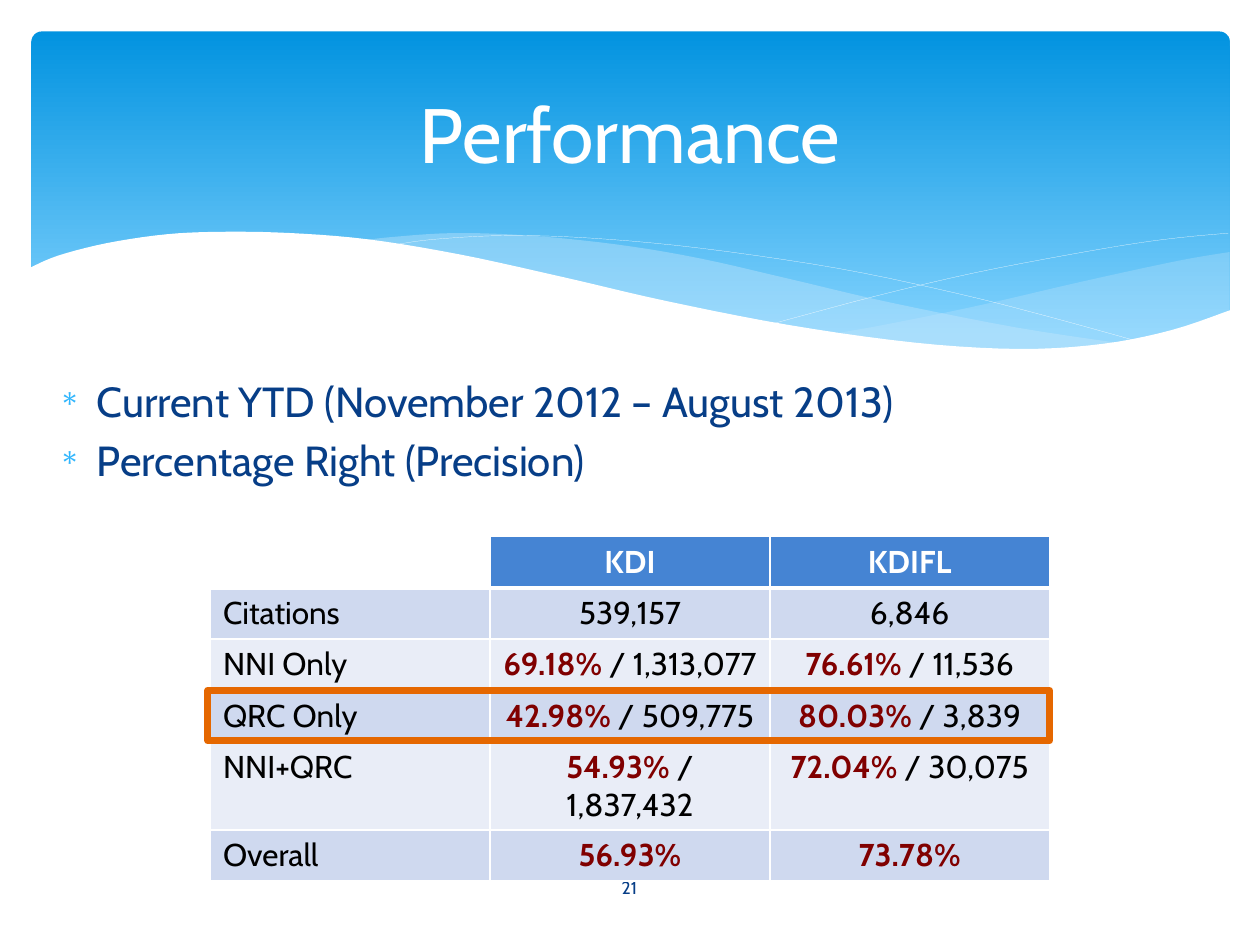
from lxml import etree
from pptx import Presentation
from pptx.dml.color import RGBColor as RGB
from pptx.enum.shapes import MSO_SHAPE as SHAPE
from pptx.enum.text import MSO_ANCHOR as ANCHOR, PP_ALIGN as ALIGN
from pptx.oxml.ns import qn
from pptx.util import Inches, Pt

FONT = "Cabin"
COLORS = {
    "white": "FFFFFF", "black": "000000", "navy": "073E87", "bullet": "31B6FD",
    "sky": "0293E0", "pale": "83D3FE", "ribbon": "C6E7FC", "header": "4584D3",
    "odd": "CFD9EF", "even": "E9EDF7", "maroon": "800000", "orange": "E56700",
}
# The slide is a grid of 100 columns and 75 rows; boxes are left, top, width, height.
COLS, ROWS = 100, 75
UNIT = Inches(10) // COLS

# Wave edges, as grid offsets from the corner of the wave box
RIGHT_TOP = [(95.3, 1.6), (91.2, 2.3), (83.8, 3.9), (75.6, 5.8), (68.3, 7.3), (63.8, 8.1)]
RIGHT_BOTTOM = [(63.8, 8.1), (69.6, 8.8), (75.8, 9.3), (81.2, 9.3), (86.6, 8.8),
                (91.2, 7.8), (95.3, 6.3)]
LEFT_TOP = [(87, 8.9), (78.4, 7.6), (68.3, 5.6), (60.6, 3.8), (53.2, 2.1), (46.6, 1),
            (39.7, 0.3), (33.8, 0.1), (29, 0.4), (26.3, 0.7)]
LEFT_BOTTOM = [(26.3, 0.7), (33.9, 1.9), (42.6, 3.8), (50.7, 5.6), (59.5, 7.4),
               (68.6, 8.8), (76.2, 9.4), (82.5, 9.3), (87, 8.9)]
FALLING = [(28.6, 1.1), (32.1, 0.6), (37.8, 0.3), (44.6, 0.5), (53.3, 1.3),
           (64.2, 2.9), (73.7, 4.9), (80.8, 6.7), (88.4, 8.8)]
RISING = [(59, 7.3), (67.2, 5.1), (75.3, 3.2), (84.3, 1.5), (90.1, 0.6), (95.2, 0.1)]
FRONT = [(95.4, 6.2), (90.7, 7.8), (85.2, 8.9), (78.6, 9.3), (70.3, 8.8), (60.3, 7.4),
         (50.6, 5.5), (42.4, 3.6), (34.2, 1.8), (26.9, 0.6), (20.7, 0.1), (15.4, 0),
         (10.9, 0.2), (6.2, 0.9), (2.3, 1.9), (0, 2.9)]

TABLE = [
    ("", "KDI", "KDIFL"),
    ("Citations", "539,157", "6,846"),
    ("NNI Only", "69.18% / 1,313,077", "76.61% / 11,536"),
    ("QRC Only", "42.98% / 509,775", "80.03% / 3,839"),
    ("NNI+QRC", "54.93% / 1,837,432", "72.04% / 30,075"),
    ("Overall", "56.93%", "73.78%"),
]


def rgb(name):
    return RGB.from_string(COLORS[name])


def emu(box):
    return [round(v * UNIT) for v in box]


def add_run(p, text, size=18, color="black", bold=False):
    r = p.add_run()
    r.text = text
    r.font.name, r.font.size, r.font.bold = FONT, Pt(size), bold
    r.font.color.rgb = rgb(color)


def add_text(s, box, lines, align=ALIGN.LEFT, anchor=ANCHOR.MIDDLE, **fmt):
    tf = s.shapes.add_textbox(*emu(box)).text_frame
    tf.word_wrap, tf.vertical_anchor = True, anchor
    for i, line in enumerate(lines):
        p = tf.add_paragraph() if i else tf.paragraphs[0]
        p.alignment = align
        add_run(p, line, **fmt)
    return tf


def spline(knots, steps=5):
    """Points of a Catmull-Rom curve through the knots."""
    k = [knots[0], *knots, knots[-1]]
    points = [knots[0]]
    for a, b, c, d in zip(k, k[1:], k[2:], k[3:]):
        for t in (n / steps for n in range(1, steps + 1)):
            points.append(tuple(
                (2 * q + (r - p) * t + (2 * p - 5 * q + 4 * r - e) * t ** 2
                 + (3 * q - p - 3 * r + e) * t ** 3) / 2
                for p, q, r, e in zip(a, b, c, d)))
    return points


def add_wave(s, box, points, fill=None, alpha=100):
    """A filled area, or a white hairline when there is no fill."""
    first, *rest = [emu((box[0] + x, box[1] + y)) for x, y in points]
    builder = s.shapes.build_freeform(*first)
    builder.add_line_segments(rest, close=bool(fill))
    sp = builder.convert_to_shape()
    sp.shadow.inherit = False
    if fill:
        sp.fill.solid()
        sp.fill.fore_color.rgb = rgb(fill)
        sp.line.fill.background()
        if alpha < 100:
            color = sp._element.spPr.find(".//" + qn("a:srgbClr"))
            etree.SubElement(color, qn("a:alpha"), val=str(alpha * 1000))
    else:
        sp.fill.background()
        sp.line.color.rgb = rgb("white")
        sp.line.width = Pt(0.1)


def add_banner(s, box):
    sp = s.shapes.add_shape(SHAPE.ROUNDED_RECTANGLE, *emu(box))
    sp.adjustments[0] = 0.03
    sp.shadow.inherit = False
    sp.line.fill.background()
    sp.fill.gradient()
    sp.fill.gradient_angle = 270
    for stop, position, color in zip(sp.fill.gradient_stops, (0, 0.9), ("sky", "pale")):
        stop.position = position
        stop.color.rgb = rgb(color)


def add_waves(s, box):
    w, h = box[2:]
    add_wave(s, box, spline(RIGHT_TOP) + spline(RIGHT_BOTTOM), "ribbon", 29)
    add_wave(s, box, spline(LEFT_TOP) + spline(LEFT_BOTTOM), "ribbon", 40)
    for edge in (FALLING, RISING):
        add_wave(s, box, spline(edge))
    add_wave(s, box, spline(FRONT) + [(0, h), (w, h)], "white")


def add_bullets(s, box, lines):
    tf = add_text(s, box, lines, anchor=ANCHOR.TOP, size=24, color="navy")
    for p in tf.paragraphs:
        p.space_before = Pt(4.8)
        pPr = p._p.get_or_add_pPr()
        pPr.set("marL", str(Inches(0.3)))
        pPr.set("indent", str(-Inches(0.3)))
        tint = etree.SubElement(pPr, qn("a:buClr"))
        etree.SubElement(tint, qn("a:srgbClr"), val=COLORS["bullet"])
        etree.SubElement(pPr, qn("a:buSzPct"), val="70000")
        etree.SubElement(pPr, qn("a:buChar"), char="∗")


def set_borders(cell, **widths):
    tcPr = cell._tc.get_or_add_tcPr()
    for i, side in enumerate("LRTB"):
        ln = etree.Element(qn("a:ln" + side), w=str(Pt(widths.get(side, 1))))
        fill = etree.SubElement(ln, qn("a:solidFill"))
        etree.SubElement(fill, qn("a:srgbClr"), val=COLORS["white"])
        tcPr.insert(i, ln)


def fill_cell(cell, row, col, text):
    cell.fill.solid()
    if row == 0:
        shade = "header" if text else "white"
    else:
        shade = "odd" if row % 2 else "even"
    cell.fill.fore_color.rgb = rgb(shade)
    set_borders(cell, **{0: {"B": 3}, 1: {"T": 3}}.get(row, {}))
    p = cell.text_frame.paragraphs[0]
    p.alignment = ALIGN.CENTER if col else ALIGN.LEFT
    share, percent, rest = text.rpartition("%")
    if percent:
        add_run(p, share + percent, color="maroon", bold=True)
    if rest:
        add_run(p, rest, color="black" if row else "white", bold=row == 0)


def add_results(s, box, rows):
    table = s.shapes.add_table(len(rows), len(rows[0]), *emu(box)).table
    table.first_row = table.horz_banding = False
    for i, row in enumerate(rows):
        for j, text in enumerate(row):
            fill_cell(table.cell(i, j), i, j, text)


def add_highlight(s, box):
    sp = s.shapes.add_shape(SHAPE.RECTANGLE, *emu(box))
    sp.shadow.inherit = False
    sp.fill.background()
    sp.line.color.rgb = rgb("orange")
    sp.line.width = Pt(4)
    etree.SubElement(sp.line._get_or_add_ln(), qn("a:round"))


def main():
    prs = Presentation()
    prs.slide_width, prs.slide_height = COLS * UNIT, ROWS * UNIT
    s = prs.slides.add_slide(prs.slide_layouts[6])
    # Banner with its waves
    add_banner(s, (2.5, 2.5, 95.1, 27))
    add_waves(s, (2.3, 18.4, 95.4, 14.5))
    # Text
    add_bullets(s, (3.7, 29.3, 92.5, 12.8),
                ["Current YTD (November 2012 – August 2013)", "Percentage Right (Precision)"])
    add_text(s, (43.6, 68.4, 12.7, 4), ["21"], ALIGN.CENTER, size=10, color="navy")
    add_text(s, (5, 3.7, 90, 13.7), ["Performance"], ALIGN.CENTER, size=44, color="white")
    # Results, with one row framed
    add_results(s, (16.7, 42.6, 66.6, 24.4), TABLE)
    add_highlight(s, (16.5, 54.8, 66.8, 4))
    prs.save("out.pptx")


if __name__ == "__main__":
    main()
